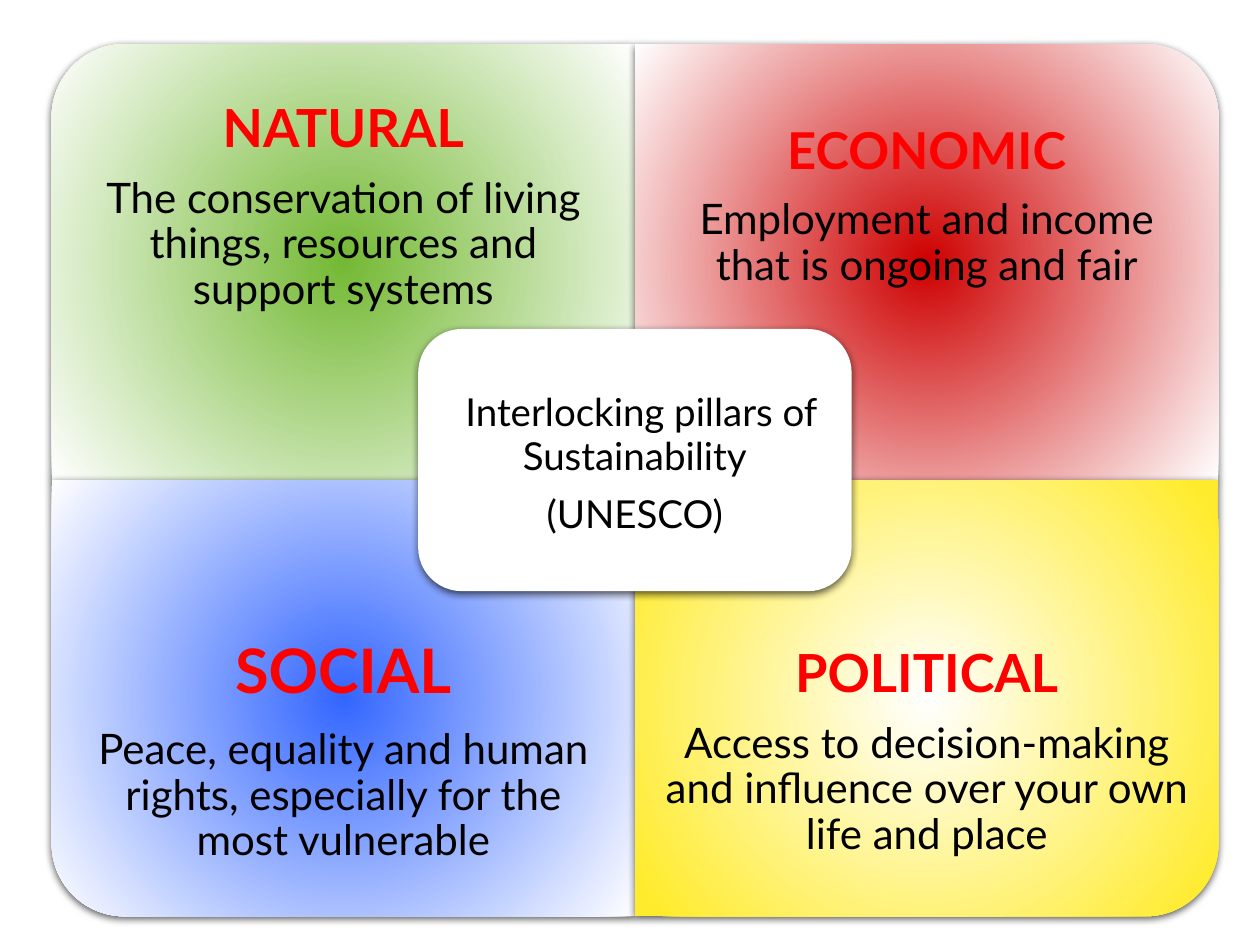
from lxml import etree
from pptx import Presentation
from pptx.dml.color import RGBColor
from pptx.enum.shapes import MSO_SHAPE as Shape
from pptx.enum.text import MSO_ANCHOR as Anchor, PP_ALIGN as Align
from pptx.oxml import parse_xml
from pptx.oxml.ns import nsdecls, qn
from pptx.util import Pt

COLORS = {
    "green": "74B934", "red": "CE0000", "blue": "3366FF", "yellow": "FFEB2D",
    "white": "FFFFFF", "heading": "FF0000", "text": "000000",
}

# Matrix of two by two tiles
LEFT, TOP = 29.5, 25.2
TILE_WIDTH, TILE_HEIGHT = 333.4, 249.2
TEXT_HEIGHT = TILE_HEIGHT * 0.75

presentation = Presentation()
presentation.slide_width, presentation.slide_height = Pt(720), Pt(540)
slide = presentation.slides.add_slide(presentation.slide_layouts[6])


def add_panel(kind, left, top, width, height, stops, rotation=0):
    """Add a shadowed shape; two or more stops make a radial gradient."""
    if rotation % 180:
        left, top = left + (width - height) / 2, top + (height - width) / 2
        width, height = height, width
    shape = slide.shapes.add_shape(kind, Pt(left), Pt(top), Pt(width), Pt(height))
    shape.rotation = rotation
    shape.line.fill.background()
    shape.fill.solid()
    shape.fill.fore_color.rgb = RGBColor.from_string(COLORS[stops[0][1]])
    properties = shape._element.spPr
    if len(stops) > 1:
        stop_xml = "".join(
            f'<a:gs pos="{position * 1000}"><a:srgbClr val="{COLORS[color]}"/></a:gs>'
            for position, color in stops)
        gradient = parse_xml(
            f'<a:gradFill {nsdecls("a")} rotWithShape="1"><a:gsLst>{stop_xml}</a:gsLst>'
            '<a:path path="circle"><a:fillToRect l="50000" t="50000" r="50000" b="50000"/>'
            '</a:path></a:gradFill>')
        properties.replace(properties.find(qn("a:solidFill")), gradient)
    properties.append(parse_xml(
        f'<a:effectLst {nsdecls("a")}><a:outerShdw blurRad="57150" dist="19050" '
        'dir="5400000" algn="ctr" rotWithShape="0"><a:srgbClr val="000000">'
        '<a:alpha val="63000"/></a:srgbClr></a:outerShdw></a:effectLst>'))


def add_text(left, top, width, height, inset, paragraphs):
    """Add centred paragraphs, each a list of (text, size, color, bold) runs."""
    box = slide.shapes.add_textbox(Pt(left), Pt(top), Pt(width), Pt(height))
    frame = box.text_frame
    frame_format = {"word_wrap": True, "vertical_anchor": Anchor.MIDDLE}
    for side in ("left", "top", "right", "bottom"):
        frame_format[f"margin_{side}"] = Pt(inset)
    for name, value in frame_format.items():
        setattr(frame, name, value)
    for index, runs in enumerate(paragraphs):
        paragraph = frame.paragraphs[0] if index == 0 else frame.add_paragraph()
        paragraph.alignment = Align.CENTER
        paragraph.line_spacing = 0.9
        paragraph.space_after = Pt(0)
        # Spacing after as a share of the text size
        spacing = paragraph._p.pPr.find(qn("a:spcAft"))
        spacing.remove(spacing[0])
        etree.SubElement(spacing, qn("a:spcPct")).set("val", "35000")
        for text, size, color, bold in runs:
            run = paragraph.add_run()
            run.text = text
            run.font.color.rgb = RGBColor.from_string(COLORS[color])
            for name, value in {"name": "Lato", "size": Pt(size), "bold": bold}.items():
                setattr(run.font, name, value)


# Pillars: column, row, rotation, gradient, inset, heading size, heading, body
pillars = [
    (0, 0, 270, [(0, "green"), (100, "white")], 16.8, 30, "NATURAL",
     "The conservation of living things, resources and support systems"),
    (1, 0, 0, [(0, "red"), (100, "white")], 16.2, 29, "ECONOMIC",
     "Employment and income that is ongoing and fair"),
    (0, 1, 180, [(0, "blue"), (100, "white")], 19.6, 35, "SOCIAL",
     "Peace, equality and human rights, especially for the most vulnerable"),
    (1, 1, 90, [(0, "white"), (94, "yellow"), (100, "yellow")], 16.8, 30, "POLITICAL",
     "Access to decision-making and influence over your own life and place"),
]
for column, row, rotation, stops, inset, size, heading, body in pillars:
    left, top = LEFT + column * TILE_WIDTH, TOP + row * TILE_HEIGHT
    add_panel(Shape.ROUND_1_RECTANGLE, left, top, TILE_WIDTH, TILE_HEIGHT, stops, rotation)
    text_top = top + row * (TILE_HEIGHT - TEXT_HEIGHT)
    add_text(left, text_top, TILE_WIDTH, TEXT_HEIGHT, inset,
             [[(heading, size, "heading", True)], [(body, 24, "text", False)]])

# Centre panel
add_panel(Shape.ROUNDED_RECTANGLE, 239, 188, 247.7, 149.8, [(0, "white")])
add_text(246.3, 195.6, 232.8, 135.2, 8.4, [
    [(" ", 28, "text", False),
     ("Interlocking pillars of Sustainability", 22, "text", False)],
    [("(UNESCO)", 22, "text", False)],
])

presentation.save("out.pptx")
